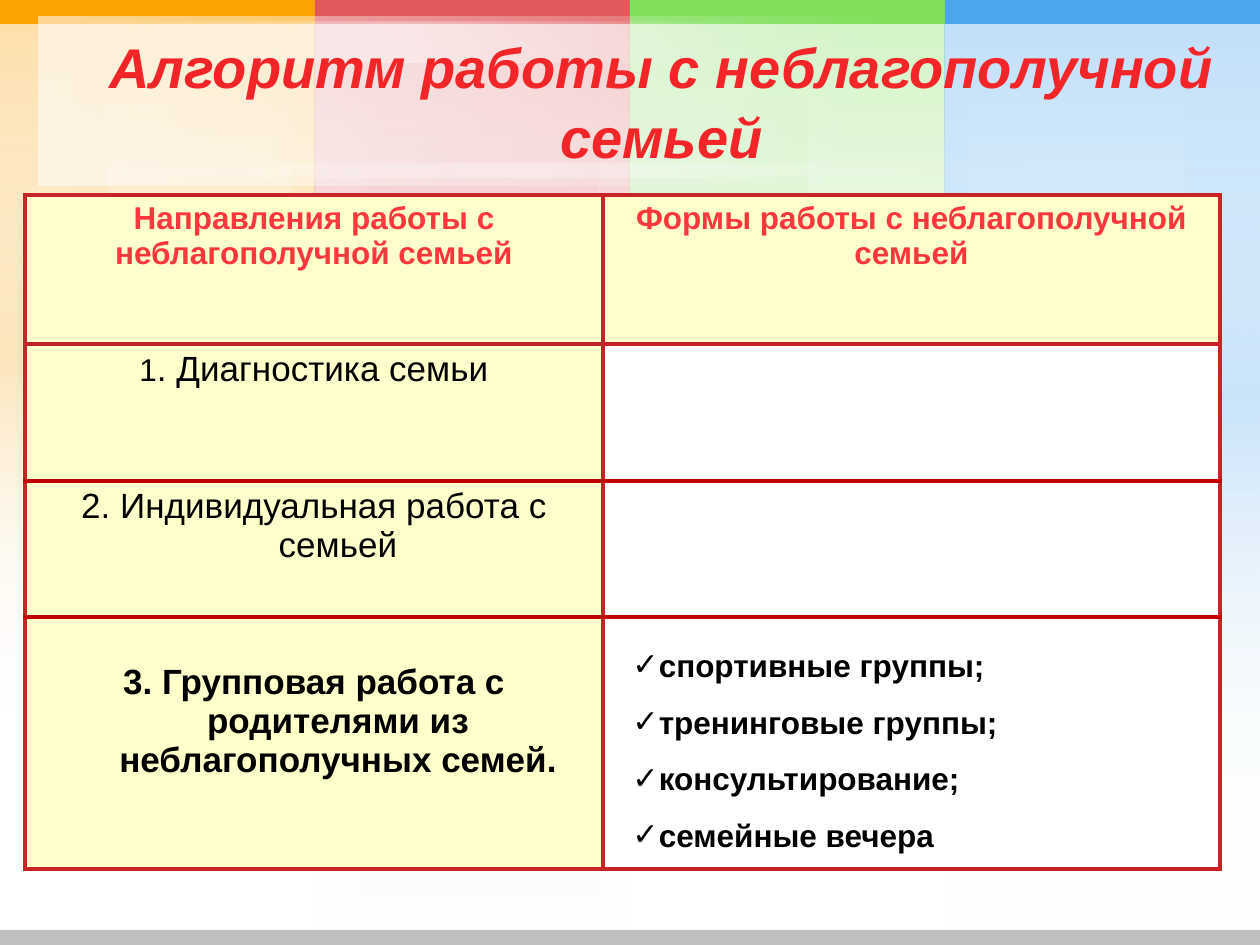
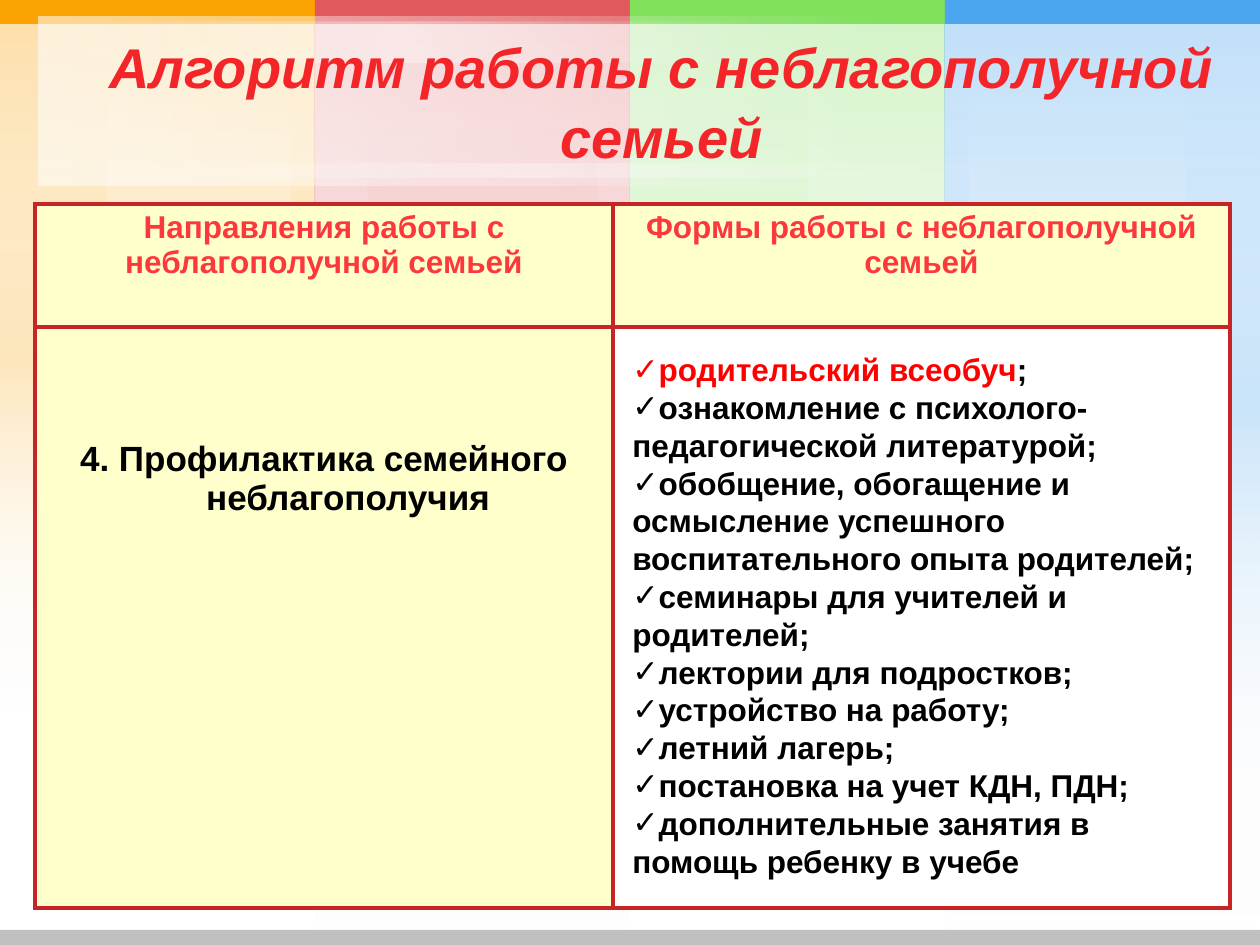
from lxml import etree
from pptx import Presentation
from pptx.dml.color import RGBColor
from pptx.enum.shapes import MSO_SHAPE
from pptx.enum.text import MSO_ANCHOR, MSO_AUTO_SIZE, PP_ALIGN
from pptx.oxml.ns import qn
from pptx.util import Pt

RECTANGLE = MSO_SHAPE.RECTANGLE
MIDDLE = MSO_ANCHOR.MIDDLE
GROW = MSO_AUTO_SIZE.SHAPE_TO_FIT_TEXT
CENTER = PP_ALIGN.CENTER

EMU_PER_PX = 914400 / 126
PAGE_WIDTH, PAGE_HEIGHT = 1260, 945
BAND_WIDTH = PAGE_WIDTH // 4
HANGING = 48
FONT = "Arial"

COLORS = {
    "orange": "FCA304", "rose": "E1595C", "green": "80E05A", "blue": "4BA5EF",
    "white": "FFFFFF", "black": "000000", "red": "FF0000", "footer": "C0C0C0",
    "title": "F32528", "heading": "FD383C", "cream": "FFFFCC",
    "border": "C72428", "row_line": "C00000",
}

# colour, height of the fade, glows as (offset, width, height)
BANDS = [
    ("orange", 709, [(292, 23, 709), (0, 106, 709)]),
    ("rose", 945, [(53, 230, 945)]),
    ("green", 709, [(0, 178, 709)]),
    ("blue", 941, [(0, 24, 803), (241, 74, 803)]),
]
TITLE = "Алгоритм работы с неблагополучной семьей"
HEADINGS = ["Направления работы с неблагополучной семьей",
            "Формы работы с неблагополучной семьей"]
COLUMN_WIDTHS = [578, 617]
GROUP_FORMS = ["спортивные группы;", "тренинговые группы;",
               "консультирование;", "семейные вечера"]
PREVENTION_FORMS = [
    "ознакомление с психолого-педагогической литературой;",
    "обобщение, обогащение и осмысление успешного воспитательного опыта родителей;",
    "семинары для учителей и родителей;",
    "лектории для подростков;",
    "устройство на работу;",
    "летний лагерь;",
    "постановка на учет КДН, ПДН;",
    "дополнительные занятия в помощь ребенку в учебе",
]


def px(length):
    return round(length * EMU_PER_PX)


def frame(*lengths):
    return [px(length) for length in lengths]


def rgb(name):
    return RGBColor.from_string(COLORS[name])


def set_font(font, size, color, bold=False, italic=False):
    font.name = FONT
    font.size = Pt(size)
    font.bold = bold
    font.italic = italic
    font.color.rgb = rgb(color)


def add_block(page, area, color):
    block = page.shapes.add_shape(RECTANGLE, *frame(*area))
    block.shadow.inherit = False
    block.line.fill.background()
    block.fill.solid()
    block.fill.fore_color.rgb = rgb(color)
    return block


def add_gradient(page, area, stops, degrees):
    """Add a block whose stops are (percent, colour, opacity percent)."""
    block = add_block(page, area, "white")
    solid = block._element.spPr.find(qn("a:solidFill"))
    gradient = etree.Element(qn("a:gradFill"), rotWithShape="1")
    stop_list = etree.SubElement(gradient, qn("a:gsLst"))
    for percent, color, opacity in stops:
        stop = etree.SubElement(stop_list, qn("a:gs"), pos=str(percent * 1000))
        shade = etree.SubElement(stop, qn("a:srgbClr"), val=COLORS[color])
        etree.SubElement(shade, qn("a:alpha"), val=str(opacity * 1000))
    etree.SubElement(gradient, qn("a:lin"), ang=str(degrees * 60000), scaled="0")
    solid.getparent().replace(solid, gradient)


def add_fade(page, area, color, opacity, degrees):
    add_gradient(page, area, [(0, color, opacity), (100, "white", 0)], degrees)


def add_glow(page, area, color, opacity, degrees):
    stops = [(0, "white", 0), (50, color, opacity), (100, "white", 0)]
    add_gradient(page, area, stops, degrees)


def add_backdrop(page):
    for index, (color, height, glows) in enumerate(BANDS):
        left = index * BAND_WIDTH
        band = (left, 0, BAND_WIDTH, height)
        add_fade(page, band, color, 20, 90)
        for offset, width, glow_height in glows:
            add_glow(page, (left + offset, 0, width, glow_height), color, 20, 90)
        add_fade(page, band, color, 20, 90)
    for index, (color, _, _) in enumerate(BANDS):
        add_block(page, (index * BAND_WIDTH, 0, BAND_WIDTH, 24), color)
    title_band = (39, 17, 870, 169)
    add_glow(page, (43, 164, 976, 14), "white", 35, 0)
    add_fade(page, title_band, "white", 35, 0)
    add_glow(page, (33, 22, 743, 41), "white", 35, 0)
    add_fade(page, title_band, "white", 35, 0)
    add_block(page, (0, 930, PAGE_WIDTH, 15), "footer")


def add_title(page):
    box = page.shapes.add_textbox(*frame(63, 35, 1197, 130))
    box.text_frame.word_wrap = True
    box.text_frame.vertical_anchor = MIDDLE
    para = box.text_frame.paragraphs[0]
    para.text = TITLE
    para.alignment = CENTER
    para.line_spacing = 1.04
    set_font(para.font, 32, "title", bold=True, italic=True)


def start_page(deck):
    page = deck.slides.add_slide(deck.slide_layouts[6])
    add_backdrop(page)
    add_title(page)
    return page


def set_borders(cell, top, bottom):
    sides = [("a:lnL", "border"), ("a:lnR", "border"), ("a:lnT", top), ("a:lnB", bottom)]
    properties = cell._tc.get_or_add_tcPr()
    for position, (tag, color) in enumerate(sides):
        line = etree.Element(qn(tag), w=str(Pt(2.25)))
        fill = etree.SubElement(line, qn("a:solidFill"))
        etree.SubElement(fill, qn("a:srgbClr"), val=COLORS[color])
        properties.insert(position, line)


def add_work_table(page, left, top, row_heights, line_colors):
    """Add the two-column table; line_colors run from its top edge to its bottom."""
    area = frame(left, top, sum(COLUMN_WIDTHS), sum(row_heights))
    table = page.shapes.add_table(len(row_heights), len(COLUMN_WIDTHS), *area).table
    table.first_row = table.horz_banding = False
    for column, width in zip(table.columns, COLUMN_WIDTHS):
        column.width = px(width)
    for row_index, height in enumerate(row_heights):
        table.rows[row_index].height = px(height)
        for column_index in range(len(COLUMN_WIDTHS)):
            cell = table.cell(row_index, column_index)
            cell.fill.solid()
            is_cream = row_index == 0 or column_index == 0
            cell.fill.fore_color.rgb = rgb("cream" if is_cream else "white")
            set_borders(cell, line_colors[row_index], line_colors[row_index + 1])
    for column_index, heading in enumerate(HEADINGS):
        write_cell(table.cell(0, column_index), heading, 18, "heading", bold=True)
    return table


def write_cell(cell, text, size=20, color="black", bold=False, hanging=0, top=6):
    cell.margin_top = px(top)
    para = cell.text_frame.paragraphs[0]
    para.text = text
    para.alignment = CENTER
    set_font(para.font, size, color, bold)
    if hanging:
        set_indent(para, hanging, -hanging)
    return para


def set_indent(para, margin, indent):
    properties = para._p.get_or_add_pPr()
    properties.set("marL", str(px(margin)))
    properties.set("indent", str(px(indent)))
    return properties


def add_checklist(page, area, items, spacing):
    """Add ticked items; an item is a list of (text, colour) spans."""
    box = page.shapes.add_textbox(*frame(*area))
    text_frame = box.text_frame
    text_frame.word_wrap = True
    text_frame.auto_size = GROW
    for index, spans in enumerate(items):
        para = text_frame.add_paragraph() if index else text_frame.paragraphs[0]
        para.line_spacing = spacing
        properties = set_indent(para, 0, 0)
        etree.SubElement(properties, qn("a:buFont"), typeface=FONT)
        etree.SubElement(properties, qn("a:buChar"), char="✓")
        for text, color in spans:
            span = para.add_run()
            span.text = text
            set_font(span.font, 18, color, bold=True)


def in_black(texts):
    return [[(text, "black")] for text in texts]


def build_group_work(deck):
    page = start_page(deck)
    lines = ["border", "border", "row_line", "row_line", "border"]
    table = add_work_table(page, 25, 195, [149, 137, 136, 252], lines)
    diagnosis = write_cell(table.cell(1, 0), "1", 18)
    span = diagnosis.add_run()
    span.text = ". Диагностика семьи"
    span.font.size = Pt(20)
    write_cell(table.cell(2, 0), "2. Индивидуальная работа с семьей", hanging=HANGING)
    write_cell(table.cell(3, 0), "3. Групповая работа с родителями из неблагополучных семей.",
               bold=True, hanging=HANGING, top=46)
    add_checklist(page, (620, 621, 576, 242), in_black(GROUP_FORMS), 1.5)


def build_prevention(deck):
    page = start_page(deck)
    table = add_work_table(page, 35, 204, [123, 581], ["border"] * 3)
    write_cell(table.cell(1, 0), "4. Профилактика семейного неблагополучия",
               bold=True, hanging=HANGING, top=113)
    parent_school = [("родительский всеобуч", "red"), (";", "black")]
    items = [parent_school] + in_black(PREVENTION_FORMS)
    add_checklist(page, (620, 344, 595, 547), items, 1.0)


def main():
    deck = Presentation()
    deck.slide_width, deck.slide_height = frame(PAGE_WIDTH, PAGE_HEIGHT)
    build_group_work(deck)
    build_prevention(deck)
    deck.save("out.pptx")


if __name__ == "__main__":
    main()
